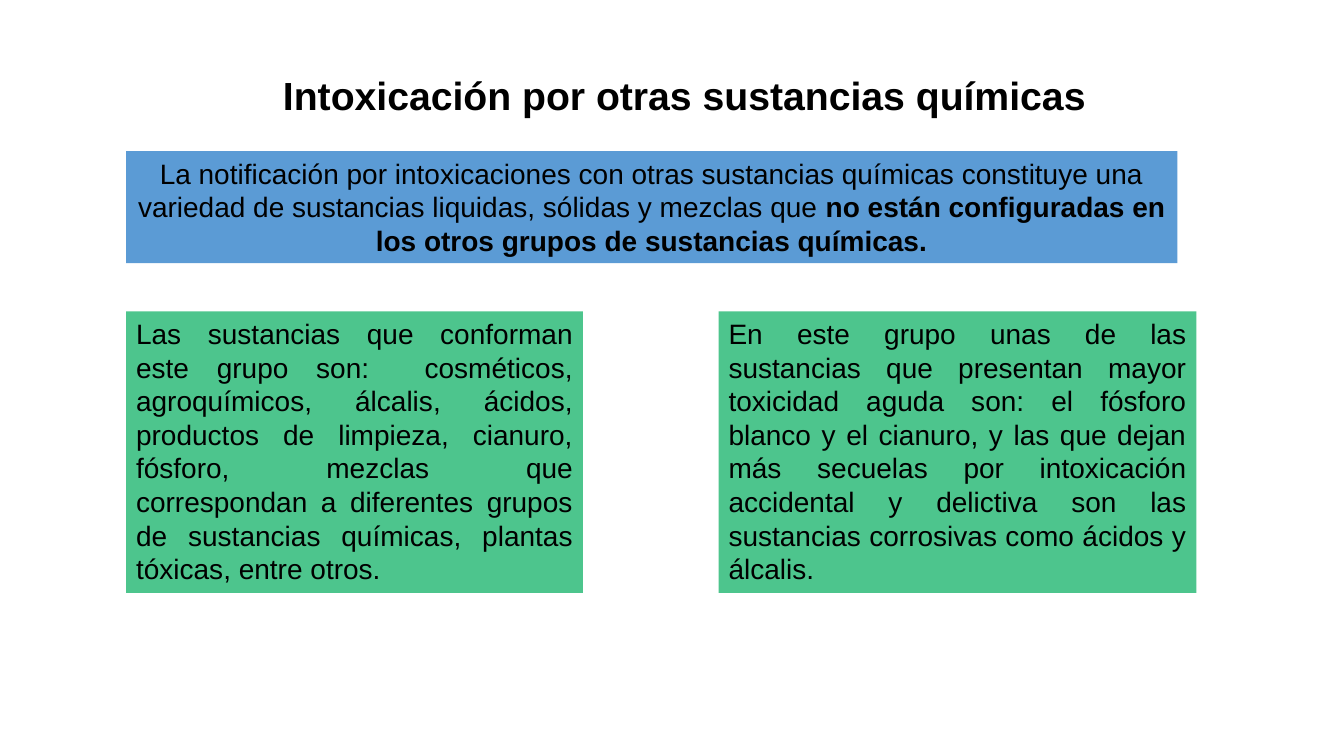
import pptx
import pptx.util
import pptx.dml.color
import pptx.enum.text

Cm = pptx.util.Cm
ALIGN = pptx.enum.text.PP_ALIGN
ANCHOR = pptx.enum.text.MSO_ANCHOR
BLACK = pptx.dml.color.RGBColor(0x00, 0x00, 0x00)
BLUE = pptx.dml.color.RGBColor(0x5B, 0x9B, 0xD5)
GREEN = pptx.dml.color.RGBColor(0x4D, 0xC5, 0x8D)

deck = pptx.Presentation()
deck.slide_width = Cm(33.87)
deck.slide_height = Cm(19.05)
page = deck.slides.add_slide(deck.slide_layouts[6])

title_format = {"size": pptx.util.Pt(28), "name": "Arial", "bold": True}
body_format = {"size": pptx.util.Pt(20), "name": "Arial", "bold": False}
strong_format = {**body_format, "bold": True}

boxes = [
    ((2.64, 1.17, 29.21, 2.57), None, ALIGN.CENTER, ANCHOR.MIDDLE, 0.9, [
        ("Intoxicación por otras sustancias químicas", title_format),
    ]),
    ((3.18, 3.81, 26.49, 2.82), BLUE, ALIGN.CENTER, ANCHOR.TOP, 1.0, [
        ("La notificación por intoxicaciones con otras sustancias químicas "
         "constituye una variedad de sustancias liquidas, sólidas y mezclas que ", body_format),
        ("no están configuradas en los otros grupos de sustancias químicas.", strong_format),
    ]),
    ((3.18, 7.85, 11.51, 7.09), GREEN, ALIGN.JUSTIFY, ANCHOR.TOP, 1.0, [
        ("Las sustancias que conforman este grupo son:  cosméticos, agroquímicos, "
         "álcalis, ácidos, productos de limpieza, cianuro, fósforo, mezclas que "
         "correspondan a diferentes grupos de sustancias químicas, plantas tóxicas, "
         "entre otros.", body_format),
    ]),
    ((18.11, 7.85, 12.04, 7.09), GREEN, ALIGN.JUSTIFY, ANCHOR.TOP, 1.0, [
        ("En este grupo unas de las sustancias que presentan mayor toxicidad aguda "
         "son: el fósforo blanco y el cianuro, y las que dejan más secuelas por "
         "intoxicación accidental y delictiva son las sustancias corrosivas como "
         "ácidos y álcalis.", body_format),
    ]),
]

for place, fill, alignment, anchor, spacing, spans in boxes:
    box = page.shapes.add_textbox(*map(Cm, place))
    if fill is not None:
        box.fill.solid()
        box.fill.fore_color.rgb = fill
    box.text_frame.word_wrap = True
    box.text_frame.vertical_anchor = anchor
    para = box.text_frame.paragraphs[0]
    para.alignment = alignment
    para.line_spacing = spacing
    for text, font_format in spans:
        span = para.add_run()
        span.text = text
        span.font.color.rgb = BLACK
        for attribute, value in font_format.items():
            setattr(span.font, attribute, value)

deck.save("out.pptx")
